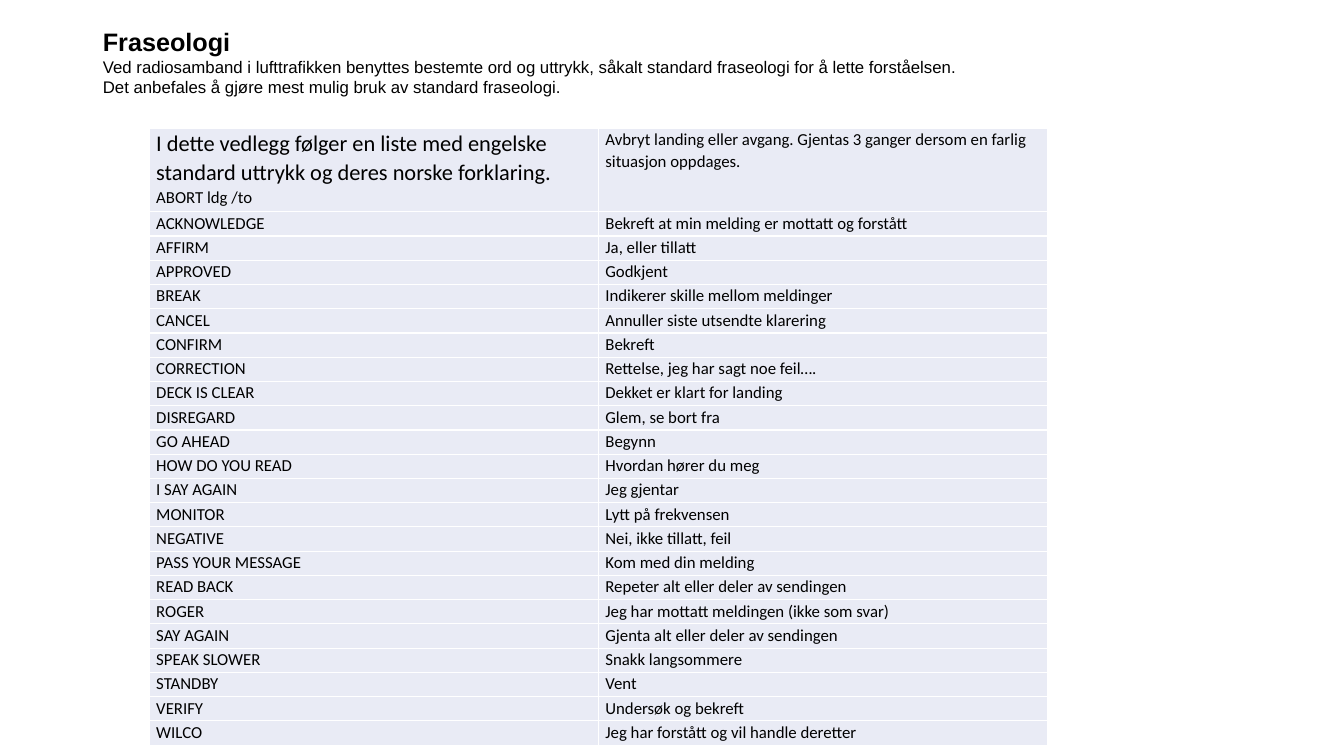
"""Build a slide listing standard radio phraseology with Norwegian explanations."""
from pptx import Presentation
from pptx.dml.color import RGBColor
from pptx.enum.text import MSO_ANCHOR, MSO_AUTO_SIZE, PP_ALIGN
from pptx.util import Inches, Pt

TITLE_LINES = [
    ("Fraseologi", 18, True),
    ("Ved radiosamband i lufttrafikken benyttes bestemte ord og uttrykk, "
     "såkalt standard fraseologi for å lette forståelsen.", 12, False),
    ("Det anbefales å gjøre mest mulig bruk av standard fraseologi.", 12, False),
]
INTRO = ("I dette vedlegg følger en liste med engelske standard uttrykk "
         "og deres norske forklaring. ")
PHRASES = [
    ("ABORT ldg /to", "Avbryt landing eller avgang. Gjentas 3 ganger dersom "
                      "en farlig situasjon oppdages."),
    ("ACKNOWLEDGE", "Bekreft at min melding er mottatt og forstått"),
    ("AFFIRM", "Ja, eller tillatt"),
    ("APPROVED", "Godkjent"),
    ("BREAK", "Indikerer skille mellom meldinger"),
    ("CANCEL", "Annuller siste utsendte klarering"),
    ("CONFIRM", "Bekreft"),
    ("CORRECTION", "Rettelse, jeg har sagt noe feil…."),
    ("DECK IS CLEAR", "Dekket er klart for landing"),
    ("DISREGARD", "Glem, se bort fra"),
    ("GO AHEAD", "Begynn"),
    ("HOW DO YOU READ", "Hvordan hører du meg"),
    ("I SAY AGAIN", "Jeg gjentar"),
    ("MONITOR", "Lytt på frekvensen"),
    ("NEGATIVE", "Nei, ikke tillatt, feil"),
    ("PASS YOUR MESSAGE", "Kom med din melding"),
    ("READ BACK", "Repeter alt eller deler av sendingen"),
    ("ROGER", "Jeg har mottatt meldingen (ikke som svar)"),
    ("SAY AGAIN", "Gjenta alt eller deler av sendingen"),
    ("SPEAK SLOWER", "Snakk langsommere"),
    ("STANDBY", "Vent"),
    ("VERIFY", "Undersøk og bekreft"),
    ("WILCO", "Jeg har forstått og vil handle deretter"),
]

BLACK = RGBColor(0x00, 0x00, 0x00)
PALE_BLUE = RGBColor(0xE9, 0xEB, 0xF5)
TABLE_BOX = [Inches(v) for v in (1.48, 1.27, 8.91, 6.13)]
FIRST_ROW = Inches(0.83)


def add_run(p, text, name, size, bold=False):
    r = p.add_run()
    r.text = text
    r.font.name, r.font.size, r.font.bold = name, Pt(size), bold
    r.font.color.rgb = BLACK


def fill_title(sp):
    sp.left, sp.top, sp.width, sp.height = map(Inches, (0.92, 0, 11.5, 1.45))
    tf = sp.text_frame
    tf.auto_size, tf.word_wrap = MSO_AUTO_SIZE.NONE, True
    tf.vertical_anchor = MSO_ANCHOR.MIDDLE
    tf.margin_bottom = Inches(0.27)
    for i, (text, size, bold) in enumerate(TITLE_LINES):
        p = tf.add_paragraph() if i else tf.paragraphs[0]
        p.alignment = PP_ALIGN.LEFT
        add_run(p, text, "Arial", size, bold)


def add_phrases(s):
    table = s.shapes.add_table(len(PHRASES), 2, *TABLE_BOX).table
    table.first_row = table.horz_banding = False
    row_height = (TABLE_BOX[3] - FIRST_ROW) // (len(PHRASES) - 1)
    for i, phrase in enumerate(PHRASES):
        table.rows[i].height = row_height if i else FIRST_ROW
        for j, text in enumerate(phrase):
            cell = table.cell(i, j)
            cell.fill.solid()
            cell.fill.fore_color.rgb = PALE_BLUE
            cell.margin_left = cell.margin_right = Inches(0.07)
            cell.margin_top = cell.margin_bottom = 0
            p = cell.text_frame.paragraphs[0]
            p.line_spacing = 1.07
            if i == j == 0:
                add_run(p, INTRO, "Calibri", 16)
            add_run(p, text, "Calibri", 12)


def main():
    prs = Presentation()
    prs.slide_width, prs.slide_height = Inches(13.33), Inches(7.5)
    s = prs.slides.add_slide(prs.slide_layouts[5])
    fill_title(s.shapes.title)
    add_phrases(s)
    prs.save("out.pptx")


if __name__ == "__main__":
    main()
